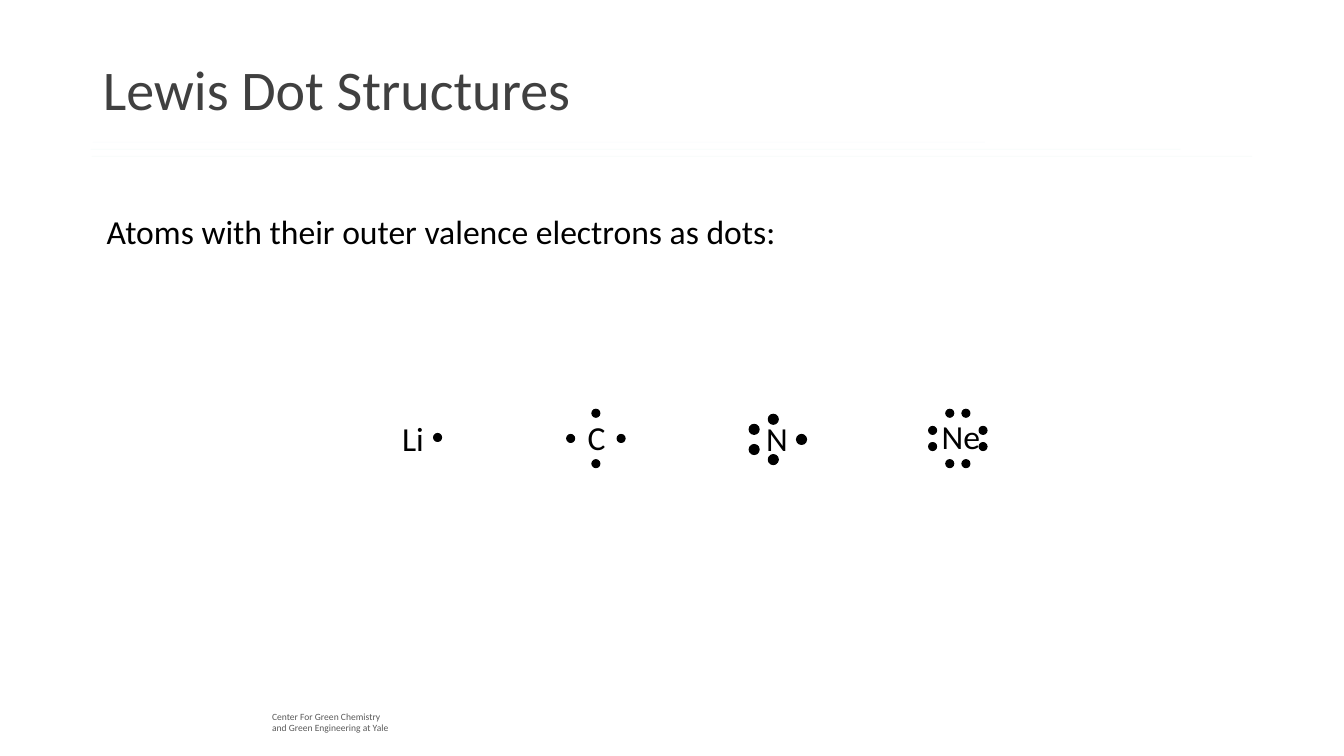
from lxml import etree
from pptx import Presentation
from pptx.dml.color import RGBColor
from pptx.enum.shapes import MSO_CONNECTOR, MSO_SHAPE
from pptx.enum.text import MSO_ANCHOR, PP_ALIGN
from pptx.oxml.ns import qn
from pptx.util import Inches, Pt

STRAIGHT = MSO_CONNECTOR.STRAIGHT
OVAL = MSO_SHAPE.OVAL
TOP, MIDDLE = MSO_ANCHOR.TOP, MSO_ANCHOR.MIDDLE
LEFT = PP_ALIGN.LEFT
FONT = "Calibri"
BLACK = "000000"
LINE_OPACITY = 3  # percent

# left, right and y of each rule under the title, with its colour
RULES = [
    (0.92, 9.77, 1.41, "4EB3CF"),
    (0.9, 11.71, 1.48, "44C1A3"),
    (0.91, 12.42, 1.55, "37A76F"),
]

SIDES = {"left": (-1, 0), "right": (1, 0), "top": (0, -1), "bottom": (0, 1)}

# symbol box, centre of the dots, dot size, half gap of a pair,
# and for each side the number of dots and their distance from the centre
ATOMS = [
    ("Li", (3.89, 4.1, 0.42, 0.5), (4.1, 4.34), 0.08, 0.08,
     {"right": (1, 0.24)}),
    ("C", (5.73, 4.09, 0.38, 0.5), (5.91, 4.35), 0.08, 0.08,
     {side: (1, 0.25) for side in SIDES}),
    ("N", (7.5, 4.1, 0.42, 0.5), (7.67, 4.36), 0.1, 0.1,
     {"left": (2, 0.19), "right": (1, 0.28), "top": (1, 0.2), "bottom": (1, 0.2)}),
    ("Ne", (9.24, 4.08, 0.59, 0.5), (9.5, 4.35), 0.08, 0.08,
     {side: (2, 0.25) for side in SIDES}),
]


def rgb(value):
    return RGBColor.from_string(value)


def place(shape, bounds):
    names = ("left", "top", "width", "height")
    for name, length in zip(names, bounds):
        setattr(shape, name, Inches(length))


def write(shape, lines, size, color=BLACK, spacing=None, wrap=True, anchor=TOP):
    frame = shape.text_frame
    frame.word_wrap = wrap
    frame.vertical_anchor = anchor
    frame.text = "\n".join(lines)
    for para in frame.paragraphs:
        para.alignment = LEFT
        para.line_spacing = spacing
        for span in para.runs:
            for name, value in {"name": FONT, "size": Pt(size)}.items():
                setattr(span.font, name, value)
            span.font.color.rgb = rgb(color)


def add_text(page, bounds, lines, size, **style):
    box = page.shapes.add_textbox(*map(Inches, bounds))
    write(box, lines, size, **style)


def add_rule(page, left, right, y, color):
    """Draw a faint horizontal line."""
    rule = page.shapes.add_connector(
        STRAIGHT, Inches(left), Inches(y), Inches(right), Inches(y))
    rule.line.width = Pt(0.5)
    rule.line.color.rgb = rgb(color)
    properties = rule._element.spPr
    tint = properties.find(".//" + qn("a:srgbClr"))
    etree.SubElement(tint, qn("a:alpha")).set("val", str(LINE_OPACITY * 1000))
    etree.SubElement(properties, qn("a:effectLst"))


def add_dot(page, x, y, size):
    bounds = (x - size / 2, y - size / 2, size, size)
    dot = page.shapes.add_shape(OVAL, *map(Inches, bounds))
    dot.shadow.inherit = False
    dot.fill.solid()
    dot.fill.fore_color.rgb = rgb(BLACK)
    dot.line.color.rgb = rgb(BLACK)
    dot.line.width = Pt(0.75)


def add_atom(page, symbol, bounds, centre, size, half_gap, electrons):
    add_text(page, bounds, [symbol], 24, wrap=False)
    for side, (count, distance) in electrons.items():
        across, down = SIDES[side]
        for shift in (0,) if count == 1 else (-half_gap, half_gap):
            add_dot(page,
                    centre[0] + across * distance + abs(down) * shift,
                    centre[1] + down * distance + abs(across) * shift,
                    size)


def main():
    deck = Presentation()
    deck.slide_width, deck.slide_height = Inches(13.33), Inches(7.5)
    page = deck.slides.add_slide(deck.slide_layouts[5])

    title = page.shapes.title
    place(title, (0.92, 0.19, 11.5, 1.45))
    write(title, ["Lewis Dot Structures"], 40, color="404040", spacing=0.9, anchor=MIDDLE)

    add_text(page, (2.6, 7, 1.86, 0.33),
             ["Center For Green Chemistry", "and Green Engineering at Yale"],
             6.8, color="595959")
    for rule in RULES:
        add_rule(page, *rule)
    add_text(page, (0.96, 2.09, 8.62, 1.56),
             ["Atoms with their outer valence electrons as dots:"], 24, spacing=0.9)
    for atom in ATOMS:
        add_atom(page, *atom)

    deck.save("out.pptx")


if __name__ == "__main__":
    main()
